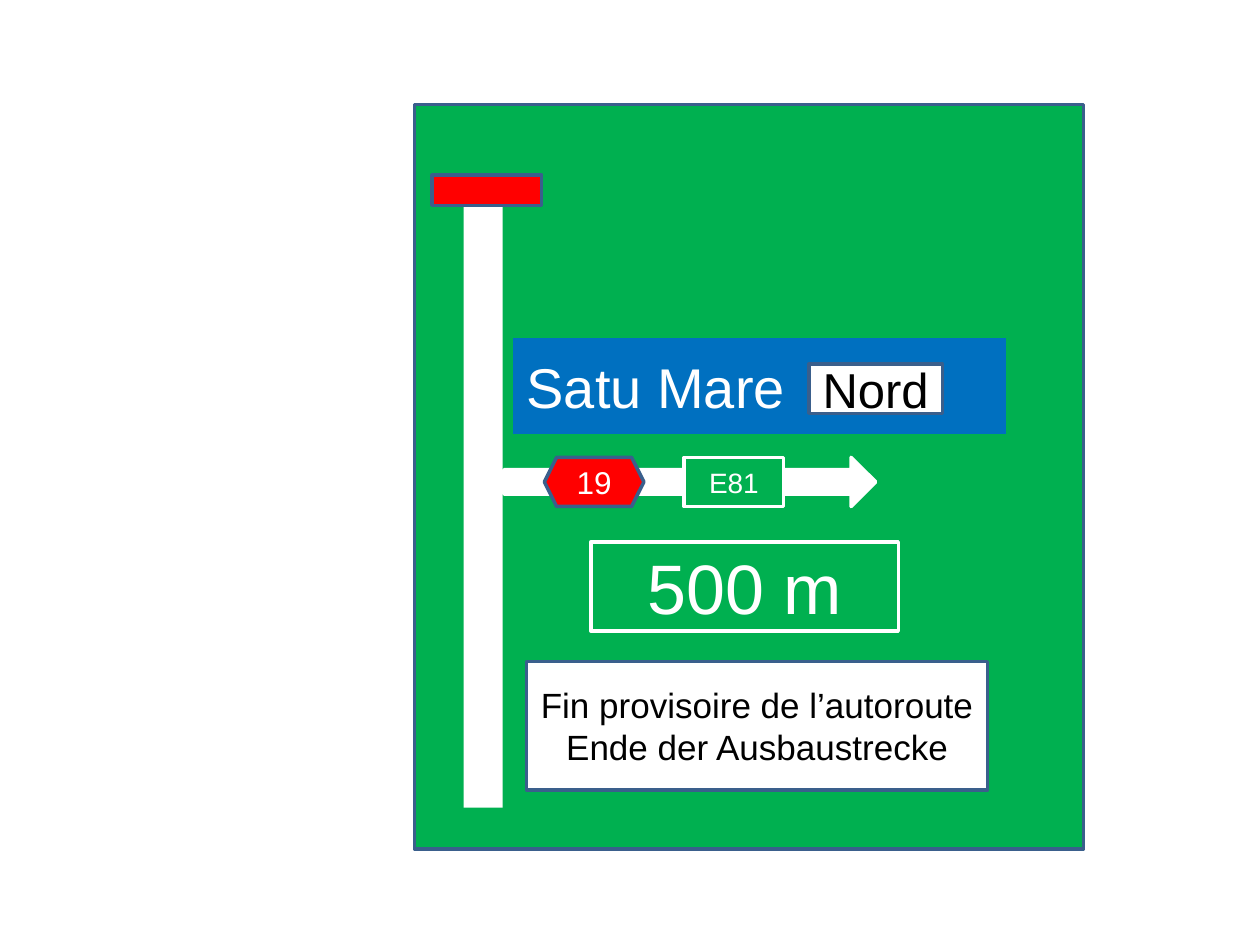
from dataclasses import dataclass
from pptx import Presentation
from pptx.dml.color import RGBColor as RGB
from pptx.enum.shapes import MSO_SHAPE as Kind
from pptx.enum.text import MSO_ANCHOR as Anchor, PP_ALIGN as Align
from pptx.util import Inches, Pt


@dataclass(frozen=True)
class Theme:
    font: str = "Arial"
    green: str = "00B050"
    blue: str = "0070C0"
    red: str = "FF0000"
    white: str = "FFFFFF"
    black: str = "000000"
    edge: str = "3A5F8C"
    line: float = 2
    road: int = 16
    exit: int = 18
    note: int = 20
    zone: int = 28
    town: int = 32
    dist: int = 40


T = Theme()

deck = Presentation()
deck.slide_width, deck.slide_height = Inches(10), Inches(7.5)
slide = deck.slides.add_slide(deck.slide_layouts[6])


def add_sign(box, fill, line=None, kind=Kind.RECTANGLE):
    shape = slide.shapes.add_shape(kind, *map(Inches, box))
    shape.shadow.inherit = False
    shape.fill.solid()
    shape.fill.fore_color.rgb = RGB.from_string(fill)
    if line:
        shape.line.color.rgb = RGB.from_string(line)
        shape.line.width = Pt(T.line)
    else:
        shape.line.fill.background()
    return shape


def add_text(shape, lines, size, color=T.white, align=Align.CENTER):
    frame = shape.text_frame
    frame.word_wrap = True
    frame.vertical_anchor = Anchor.MIDDLE
    frame.text = "\n".join(lines)
    style = {"name": T.font, "size": Pt(size)}
    for para in frame.paragraphs:
        para.alignment = align
        for run in para.runs:
            for key, value in style.items():
                setattr(run.font, key, value)
            run.font.color.rgb = RGB.from_string(color)


# Exit row: arrow and its two badges share top and height
top, high, wide = 3.63, 0.39, 0.79

# Board and exit arrow
add_sign((3.29, 0.83, 5.31, 5.91), T.green, T.edge)
add_sign((4, top, 2.95, high), T.white, T.white, Kind.RIGHT_ARROW)

# Destination
town = add_sign((4.06, 2.67, 3.94, 0.79), T.blue, T.green)
add_text(town, ["Satu Mare"], T.town, align=Align.LEFT)
town.text_frame.margin_left = Inches(0.12)

# European road number
road = add_sign((5.43, top, wide, high), T.green, T.white)
add_text(road, ["E81"], T.road)

# Motorway stem, exit number and red end bar
add_sign((3.68, 1.51, 0.31, 4.9), T.white)
badge = add_sign((4.32, top, wide, high), T.red, T.edge, Kind.HEXAGON)
add_text(badge, ["19"], T.exit)
add_sign((3.43, 1.39, 0.87, 0.24), T.red, T.edge)

# Distance, notice and town district
dist = add_sign((4.69, 4.3, 2.44, 0.71), T.green, T.white)
add_text(dist, ["500 m"], T.dist)
note = add_sign((4.18, 5.25, 3.66, 1.02), T.white, T.edge)
add_text(note, ["Fin provisoire de l’autoroute", "Ende der Ausbaustrecke"],
         T.note, T.black)
zone = add_sign((6.42, 2.89, 1.06, high), T.white, T.edge)
add_text(zone, ["Nord"], T.zone, T.black)

deck.save("out.pptx")
